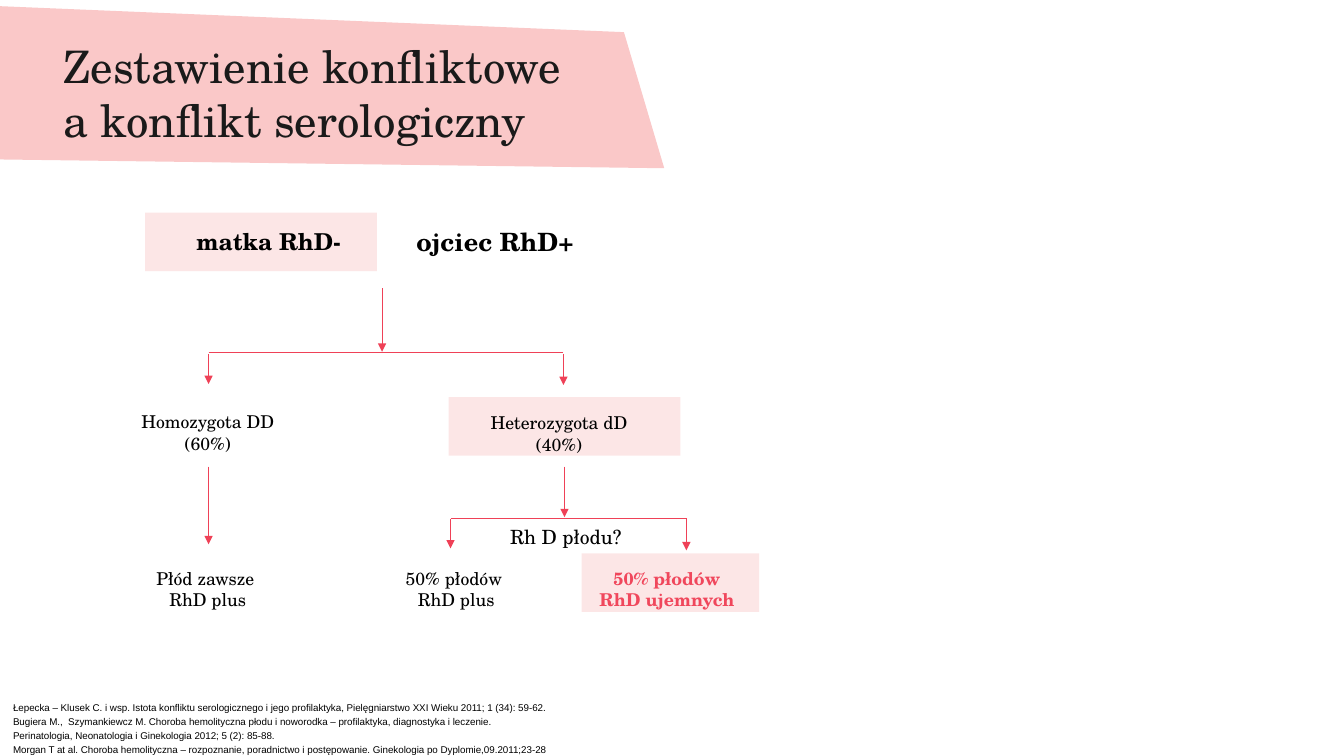
import pptx
import pptx.dml.color
import pptx.enum.shapes
import pptx.enum.text
import pptx.oxml.ns
import pptx.util
from lxml import etree

Pt = pptx.util.Pt
RGBColor = pptx.dml.color.RGBColor
qn = pptx.oxml.ns.qn
LEFT = pptx.enum.text.PP_ALIGN.LEFT
CENTER = pptx.enum.text.PP_ALIGN.CENTER

PINK = RGBColor(0xFA, 0xC8, 0xC8)
RED = RGBColor(0xEF, 0x41, 0x57)
ACCENT = RGBColor(0xF0, 0x47, 0x5C)
INK = RGBColor(0x1A, 0x1A, 0x1A)
BLACK = RGBColor(0, 0, 0)
WHITE = RGBColor(255, 255, 255)
SERIF = "TeX Gyre Schola"

TITLE = "Zestawienie konfliktowe \va konflikt serologiczny"
BANNER = [(-106.5, 0), (445.7, 23), (474.5, 120.2), (-70.5, 113)]

CARD_HEIGHT = 41.8
LABEL_HEIGHT = 33.1
# Card: left, top, width, fill
CARDS = [
    (276.5, 151.2, 162, WHITE),
    (103.7, 151.9, 165.6, PINK),
    (262.8, 395.3, 118, WHITE),
    (320.4, 283.7, 165.6, PINK),
    (65.5, 283, 162, WHITE),
    (65.5, 395.3, 162, WHITE),
    (415.5, 395.3, 126.7, PINK),
]
# Label: text, left, top, width, size, bold, colour
LABELS = [
    ("matka RhD-", 131, 159.1, 121.7, 16.6, True, BLACK),
    ("ojciec RhD+", 286.6, 158.4, 133.9, 18, True, BLACK),
    ("Heterozygota dD (40%)", 338.4, 290.9, 121.7, 12.6, False, BLACK),
    ("Homozygota DD (60%)", 81.4, 290.2, 133.9, 12.6, False, BLACK),
    ("Płód zawsze \vRhD plus", 81.4, 401.8, 133.9, 12.6, False, BLACK),
    ("50% płodów RhD ujemnych", 415.5, 401.8, 121.7, 12.6, True, ACCENT),
    ("50% płodów \vRhD plus", 265, 401.8, 121.7, 12.6, False, BLACK),
    ("Rh D płodu?", 350.6, 371.5, 107.3, 14, False, BLACK),
]
# Arrow: x, top, bottom
ARROWS = [
    (272.9, 205.9, 251.3),
    (149, 252.7, 274.3),
    (402.5, 252.7, 275),
    (149, 333.4, 388.8),
    (403.2, 333.4, 369.4),
    (321.8, 370.8, 391.7),
    (490.3, 370.8, 393.1),
]
# Branch: left, right, y
BRANCHES = [(149, 402.5, 252), (321.8, 491, 370.1)]

REFERENCES = [
    "Łepecka – Klusek C. i wsp. Istota konfliktu serologicznego i jego profilaktyka, "
    "Pielęgniarstwo XXI Wieku 2011; 1 (34): 59-62.",
    "Bugiera M.,  Szymankiewcz M. Choroba hemolityczna płodu i noworodka – profilaktyka, "
    "diagnostyka i leczenie.",
    "Perinatologia, Neonatologia i Ginekologia 2012; 5 (2): 85-88.",
    "Morgan T at al. Choroba hemolityczna – rozpoznanie, poradnictwo i postępowanie. "
    "Ginekologia po Dyplomie,09.2011;23-28",
]


def points(*lengths):
    return [Pt(length) for length in lengths]


def paint(shape, color):
    shape.shadow.inherit = False
    shape.fill.solid()
    shape.fill.fore_color.rgb = color
    shape.line.fill.background()


def write(shape, lines, size, color, font=SERIF, bold=False, align=CENTER, gap=0):
    """Fill a shape with top-anchored paragraphs, gap points apart."""
    frame = shape.text_frame
    frame.word_wrap = True
    frame.auto_size = pptx.enum.text.MSO_AUTO_SIZE.NONE
    frame.vertical_anchor = pptx.enum.text.MSO_ANCHOR.TOP
    for index, line in enumerate(lines):
        paragraph = frame.add_paragraph() if index else frame.paragraphs[0]
        paragraph.text = line
        paragraph.alignment = align
        paragraph.space_before = Pt(gap if index else 0)
        paragraph.font.name = font
        paragraph.font.size = Pt(size)
        paragraph.font.bold = bold
        paragraph.font.color.rgb = color


def add_line(slide, x1, y1, x2, y2, arrow=False):
    line = slide.shapes.add_connector(
        pptx.enum.shapes.MSO_CONNECTOR.STRAIGHT, *points(x1, y1, x2, y2))
    line.line.color.rgb = RED
    line.line.width = Pt(0.75)
    if arrow:
        outline = line.line.fill.fore_color and line.element.spPr.find(qn("a:ln"))
        etree.SubElement(outline, qn("a:tailEnd"), type="triangle")
    etree.SubElement(line.element.spPr, qn("a:effectLst"))


def add_title(slide):
    builder = slide.shapes.build_freeform(*points(*BANNER[0]), scale=1.0)
    builder.add_line_segments([points(*corner) for corner in BANNER[1:]])
    banner = builder.convert_to_shape()
    paint(banner, PINK)
    title = slide.shapes.title
    title.element.addprevious(banner.element)
    title.left, title.top, title.width, title.height = points(38.2, 24, 555.1, 101.5)
    write(title, [TITLE], 32, INK, align=LEFT)


def add_card(slide, left, top, width, color):
    card = slide.shapes.add_shape(
        pptx.enum.shapes.MSO_SHAPE.RECTANGLE, *points(left, top, width, CARD_HEIGHT))
    paint(card, color)
    tint = card.element.spPr.find(qn("a:solidFill")).find(qn("a:srgbClr"))
    etree.SubElement(tint, qn("a:alpha"), val="44000")


def main():
    presentation = pptx.Presentation()
    presentation.slide_width, presentation.slide_height = points(960, 540)
    slide = presentation.slides.add_slide(presentation.slide_layouts[5])
    add_title(slide)
    for card in CARDS:
        add_card(slide, *card)
    for x, top, bottom in ARROWS:
        add_line(slide, x, top, x, bottom, arrow=True)
    for left, right, y in BRANCHES:
        add_line(slide, left, y, right, y)
    for text, left, top, width, size, bold, color in LABELS:
        label = slide.shapes.add_textbox(*points(left, top, width, LABEL_HEIGHT))
        write(label, [text], size, color, bold=bold)
    sources = slide.shapes.add_textbox(*points(2.2, 497.5, 627.8, 52.6))
    write(sources, REFERENCES, 7, BLACK, font="Arial", align=LEFT, gap=1.7)
    presentation.save("out.pptx")


if __name__ == "__main__":
    main()
